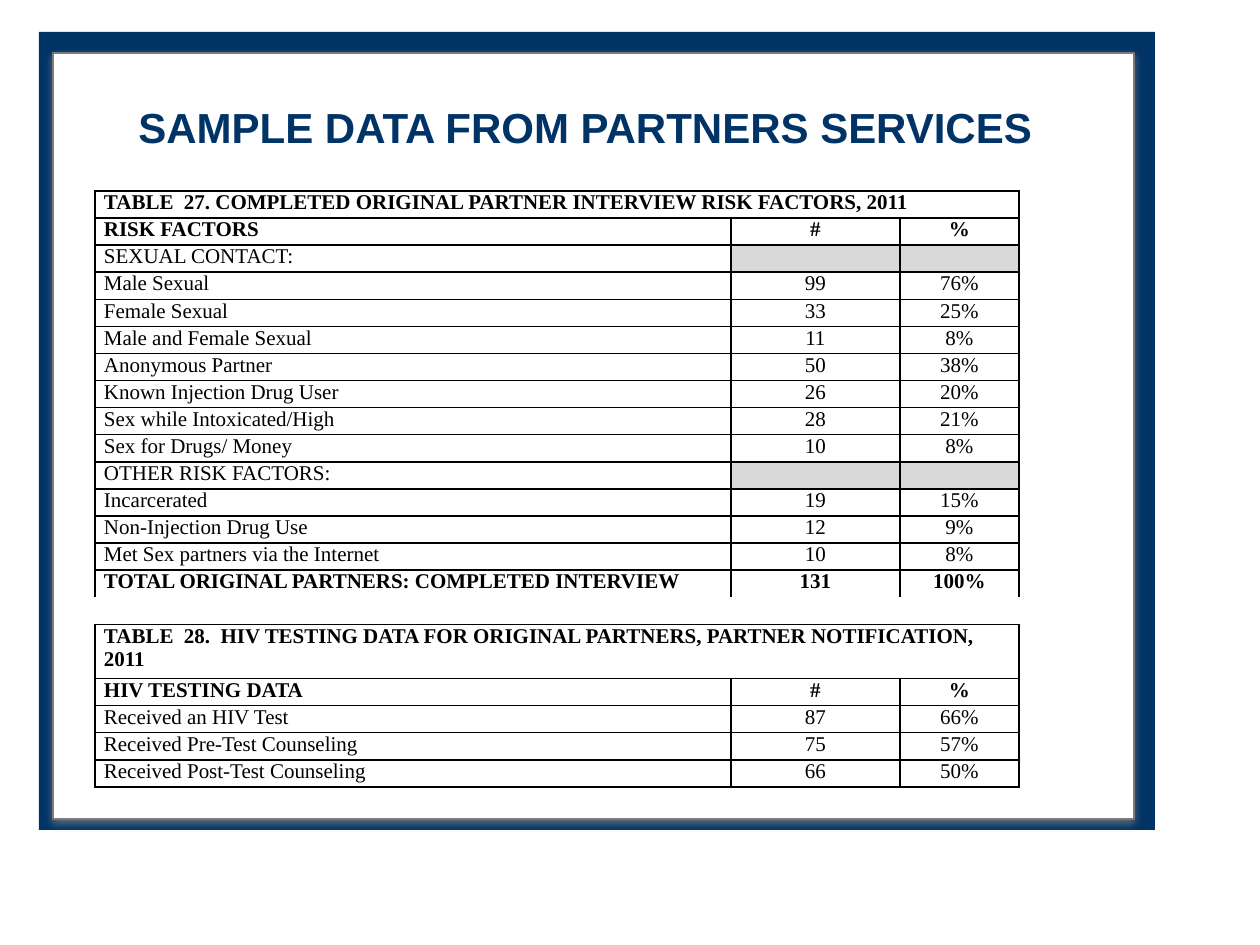
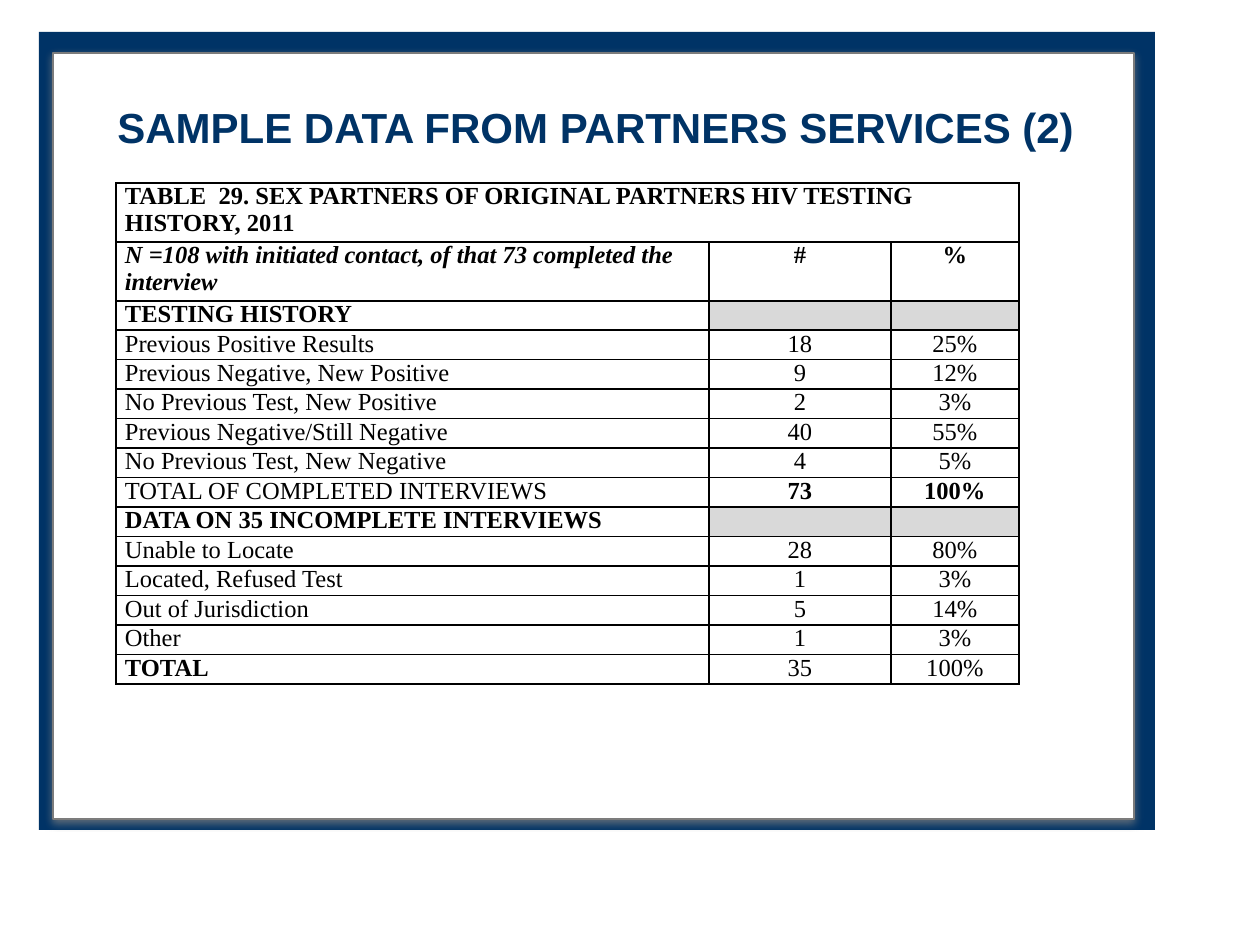
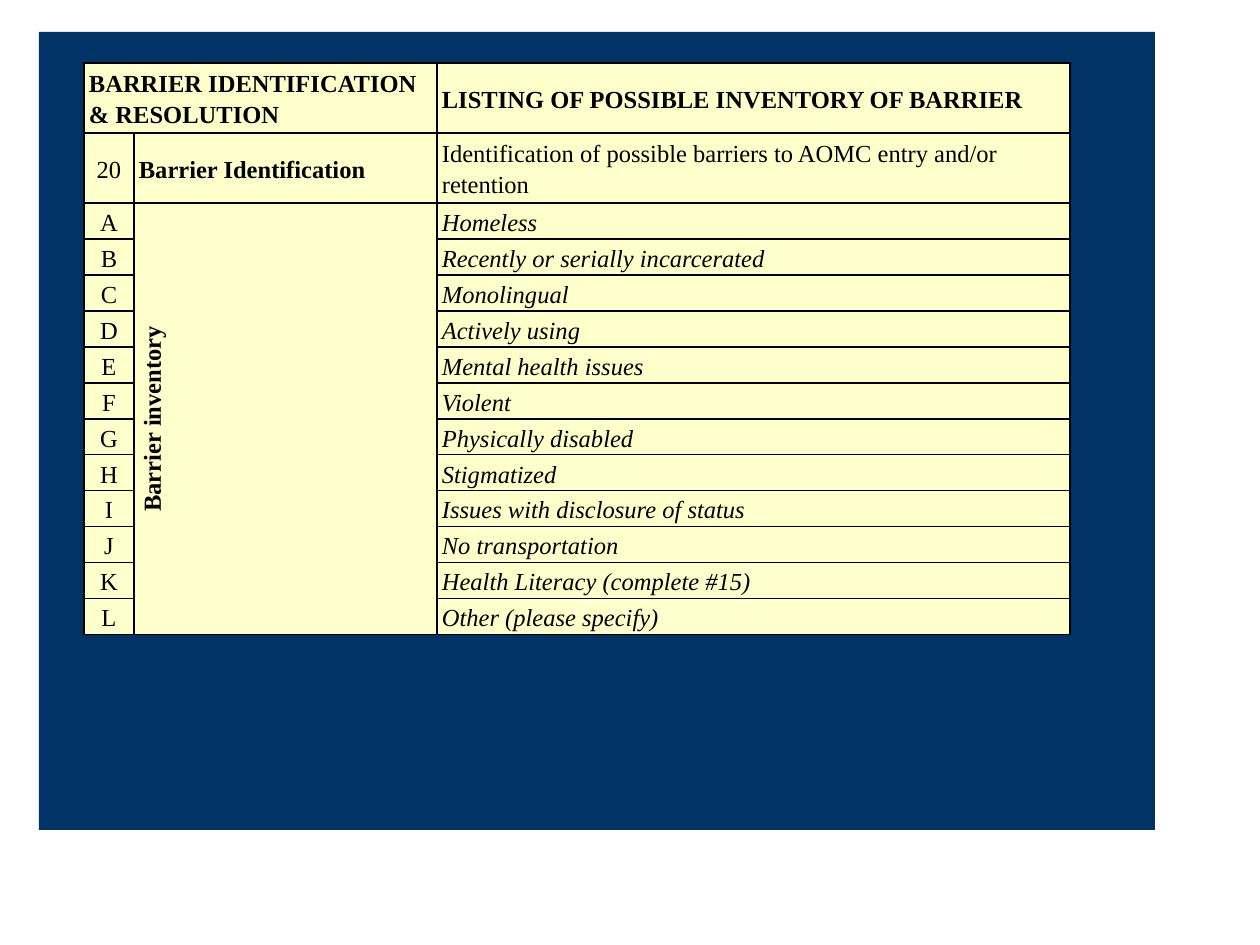
from lxml.etree import SubElement
from pptx import Presentation
from pptx.dml.color import RGBColor
from pptx.enum.shapes import MSO_SHAPE
from pptx.enum.text import MSO_ANCHOR, MSO_AUTO_SIZE, PP_ALIGN
from pptx.oxml.ns import qn
from pptx.util import Emu, Pt

NAVY = RGBColor(0x00, 0x33, 0x66)
WHITE = RGBColor(0xFF, 0xFF, 0xFF)
BLACK = RGBColor(0x00, 0x00, 0x00)
STEEL = RGBColor(0x7C, 0x7C, 0x7C)
SHADE = RGBColor(0x80, 0x80, 0x80)
GREY = RGBColor(0xD9, 0xD9, 0xD9)
CREAM = RGBColor(0xFF, 0xFF, 0xCC)

BOLD, ITALIC = "*", "/"  # leading marks in cell text


def px(n):
    """Turn pixels (126 to the inch) into EMU."""
    return Emu(round(n * 914400 / 126))


def add_tint(parent, color, alpha=None):
    node = SubElement(parent, qn("a:srgbClr"), val=str(color))
    if alpha:
        SubElement(node, qn("a:alpha"), val=str(alpha * 1000))


class Deck:
    def __init__(self):
        self.prs = Presentation()
        self.prs.slide_width, self.prs.slide_height = px(1260), px(945)
        self.slide = None

    def new(self):
        """Start a slide with the navy field."""
        self.slide = self.prs.slides.add_slide(self.prs.slide_layouts[6])
        self.rect(39, 32, 1116, 798, NAVY)

    def rect(self, x, y, w, h, fill):
        box = self.slide.shapes.add_shape(
            MSO_SHAPE.RECTANGLE, px(x), px(y), px(w), px(h))
        box.shadow.inherit = False
        box.fill.solid()
        box.fill.fore_color.rgb = fill
        box.line.fill.background()
        return box

    def panel(self):
        """Lay the white page with its soft shadow on the field."""
        box = self.rect(53, 53, 1081, 766, WHITE)
        box.line.color.rgb = STEEL
        box.line.width = Pt(1)
        effects = box._element.spPr.find(qn("a:effectLst"))
        glow = SubElement(effects, qn("a:outerShdw"), blurRad=str(Pt(5)),
                          dist=str(Pt(2)), dir="5400000", rotWithShape="0")
        add_tint(glow, SHADE, 75)

    def title(self, x, w, text):
        box = self.slide.shapes.add_textbox(px(x), px(95), px(w), px(64))
        frame = box.text_frame
        frame.word_wrap = False
        frame.auto_size = MSO_AUTO_SIZE.SHAPE_TO_FIT_TEXT
        frame.text = text
        font = frame.paragraphs[0].runs[0].font
        font.name, font.size, font.bold = "Arial", Pt(24), True
        font.color.rgb = NAVY

    def table(self, x, y, cols, heights, rows, merges, size, mid=(1, 2),
              fill=None, pad=(9, 0), gap=None, lead=None):
        """Draw a ruled table; gap is a row left without side rules."""
        shape = self.slide.shapes.add_table(
            len(rows), len(cols), px(x), px(y), px(sum(cols)), px(sum(heights)))
        grid = shape.table
        grid.first_row = grid.horz_banding = False
        for col, w in zip(grid.columns, cols):
            col.width = px(w)
        for row, h in zip(grid.rows, heights):
            row.height = px(h)
        for top, left, end, right in merges:
            grid.cell(top, left).merge(grid.cell(end, right))
        for r, row in enumerate(rows):
            bare = ""
            if gap is not None:
                bare = {gap: "LRT", gap - 1: "B"}.get(r, "")
            for c in range(len(cols)):
                text = row[c] if c < len(row) else ""
                cell = grid.cell(r, c)
                self.rule(cell, bare)
                self.paint(cell, GREY if text is None else fill)
                cell.margin_left = cell.margin_right = px(pad[0])
                cell.margin_top = cell.margin_bottom = px(pad[1])
                self.label(cell, text or "", size, c in mid, lead)
        return grid

    def rule(self, cell, bare):
        props = cell._tc.get_or_add_tcPr()
        for side in "LRTB":
            line = SubElement(props, qn(f"a:ln{side}"), w=str(Pt(1)))
            if side in bare:
                SubElement(line, qn("a:noFill"))
            else:
                add_tint(SubElement(line, qn("a:solidFill")), BLACK)

    def paint(self, cell, color):
        if color is None:
            cell.fill.background()
        else:
            cell.fill.solid()
            cell.fill.fore_color.rgb = color

    def label(self, cell, text, size, center, lead):
        para = cell.text_frame.paragraphs[0]
        if lead:
            para.line_spacing = lead
        if not text:
            SubElement(para._p, qn("a:endParaRPr"), sz=str(size * 100))
            return
        para.text = text.lstrip(BOLD + ITALIC)
        para.alignment = PP_ALIGN.CENTER if center else PP_ALIGN.LEFT
        marks = text[:len(text) - len(para.text)]
        font = para.runs[0].font
        font.name, font.size = "Times New Roman", Pt(size)
        font.bold, font.italic = BOLD in marks, ITALIC in marks
        font.color.rgb = BLACK


RISKS = [
    ("*TABLE  27. COMPLETED ORIGINAL PARTNER INTERVIEW RISK FACTORS, 2011",),
    ("*RISK FACTORS", "*#", "*%"),
    ("SEXUAL CONTACT:", None, None),
    ("Male Sexual", "99", "76%"),
    ("Female Sexual", "33", "25%"),
    ("Male and Female Sexual", "11", "8%"),
    ("Anonymous Partner", "50", "38%"),
    ("Known Injection Drug User", "26", "20%"),
    ("Sex while Intoxicated/High", "28", "21%"),
    ("Sex for Drugs/ Money", "10", "8%"),
    ("OTHER RISK FACTORS:", None, None),
    ("Incarcerated", "19", "15%"),
    ("Non-Injection Drug Use", "12", "9%"),
    ("Met Sex partners via the Internet", "10", "8%"),
    ("*TOTAL ORIGINAL PARTNERS: COMPLETED INTERVIEW", "*131", "*100%"),
    (),
    ("*TABLE  28.  HIV TESTING DATA FOR ORIGINAL PARTNERS, "
     "PARTNER NOTIFICATION, 2011",),
    ("*HIV TESTING DATA", "*#", "*%"),
    ("Received an HIV Test", "87", "66%"),
    ("Received Pre-Test Counseling", "75", "57%"),
    ("Received Post-Test Counseling", "66", "50%"),
]

TESTS = [
    ("*TABLE  29. SEX PARTNERS OF ORIGINAL PARTNERS HIV TESTING HISTORY, 2011",),
    ("*/N =108 with initiated contact, of that 73 completed the interview",
     "*#", "*%"),
    ("*TESTING HISTORY", None, None),
    ("Previous Positive Results", "18", "25%"),
    ("Previous Negative, New Positive", "9", "12%"),
    ("No Previous Test, New Positive", "2", "3%"),
    ("Previous Negative/Still Negative", "40", "55%"),
    ("No Previous Test, New Negative", "4", "5%"),
    ("TOTAL OF COMPLETED INTERVIEWS", "*73", "*100%"),
    ("*DATA ON 35 INCOMPLETE INTERVIEWS", None, None),
    ("Unable to Locate", "28", "80%"),
    ("Located, Refused Test", "1", "3%"),
    ("Out of Jurisdiction", "5", "14%"),
    ("Other", "1", "3%"),
    ("*TOTAL", "35", "100%"),
]

BARRIERS = [
    "Homeless", "Recently or serially incarcerated", "Monolingual",
    "Actively using", "Mental health issues", "Violent",
    "Physically disabled", "Stigmatized", "Issues with disclosure of status",
    "No transportation", "Health Literacy (complete #15)",
    "Other (please specify)",
]


def share(total, count, tall):
    """Split a height into equal rows, the tall ones counting double."""
    unit = total / (count + len(tall))
    return [unit * (2 if n in tall else 1) for n in range(count)]


def risk_slide(deck):
    deck.new()
    deck.panel()
    wide = [(n, 0, n, 2) for n in (0, 15, 16)]
    deck.table(95, 191, (636, 169, 119), share(596, len(RISKS), (16,)),
               RISKS, wide, 12, gap=15)
    deck.title(126, 927, "SAMPLE DATA FROM PARTNERS SERVICES")


def test_slide(deck):
    deck.new()
    deck.panel()
    deck.table(116, 183, (593, 182, 128), share(500, len(TESTS), (0, 1)),
               TESTS, [(0, 0, 0, 2)], 14)
    deck.title(105, 992, "SAMPLE DATA FROM PARTNERS SERVICES (2)")


def barrier_slide(deck):
    deck.new()
    rows = [
        ("*BARRIER IDENTIFICATION & RESOLUTION", "",
         "*LISTING OF POSSIBLE INVENTORY OF BARRIER"),
        ("20", "*Barrier Identification",
         "Identification of possible barriers to AOMC entry and/or retention"),
    ]
    for n, (key, name) in enumerate(zip("ABCDEFGHIJKL", BARRIERS)):
        rows.append((key, "" if n else "*Barrier inventory", ITALIC + name))
    heights = [70, 70] + [36] * len(BARRIERS)
    grid = deck.table(84, 63, (50, 303, 633), heights, rows,
                      [(0, 0, 0, 1), (2, 1, 13, 1)], 14, mid=(0,),
                      fill=CREAM, pad=(5, 1), lead=1.15)
    for cell in grid.iter_cells():
        cell.vertical_anchor = MSO_ANCHOR.MIDDLE
    grid.cell(0, 0).text_frame.paragraphs[0].alignment = PP_ALIGN.LEFT
    side = grid.cell(2, 1)
    side.text_frame.paragraphs[0].alignment = PP_ALIGN.CENTER
    side._tc.get_or_add_tcPr().set("vert", "vert270")


def main():
    deck = Deck()
    risk_slide(deck)
    test_slide(deck)
    barrier_slide(deck)
    deck.prs.save("out.pptx")


if __name__ == "__main__":
    main()
